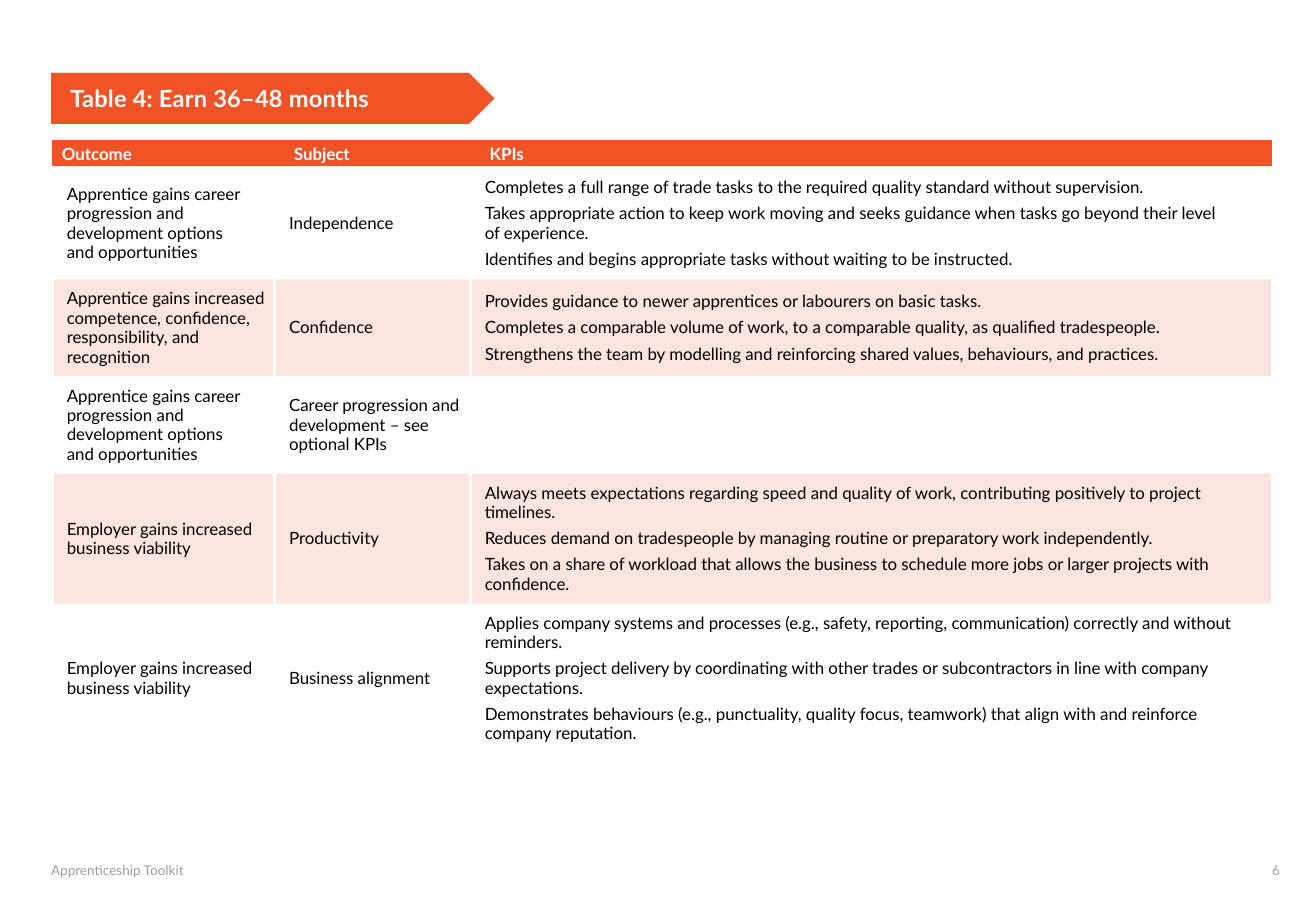
"""Builds the slide with the KPI table for months 36 to 48 of an apprenticeship."""
from lxml import etree
from pptx import Presentation
from pptx import util as u
from pptx.dml.color import RGBColor
from pptx.enum import shapes, text
from pptx.oxml import ns

ORANGE, WHITE, BLACK, GREY = "F05326", "FFFFFF", "000000", "9B9DA1"
WIDTHS = [1.83, 1.61, 6.6]
HEIGHTS = [0.23, 0.92, 0.8, 0.8, 1.06, 1.22]
CAREER = "Apprentice gains career progression and development options \nand opportunities"
VIABLE = "Employer gains increased business viability"
ROWS = [
    (["Outcome"], ["Subject"], ["KPIs"]),
    ([CAREER], ["Independence"], [
        "Completes a full range of trade tasks to the required quality standard without supervision.",
        "Takes appropriate action to keep work moving and seeks guidance when tasks go beyond their level \nof experience.",
        "Identifies and begins appropriate tasks without waiting to be instructed."]),
    (["Apprentice gains increased competence, confidence, responsibility, and recognition"], ["Confidence"], [
        "Provides guidance to newer apprentices or labourers on basic tasks.",
        "Completes a comparable volume of work, to a comparable quality, as qualified tradespeople.",
        "Strengthens the team by modelling and reinforcing shared values, behaviours, and practices."]),
    ([CAREER], ["Career progression and development – see optional KPIs"], []),
    ([VIABLE], ["Productivity"], [
        "Always meets expectations regarding speed and quality of work, contributing positively to project timelines.",
        "Reduces demand on tradespeople by managing routine or preparatory work independently.",
        "Takes on a share of workload that allows the business to schedule more jobs or larger projects with confidence."]),
    ([VIABLE], ["Business alignment"], [
        "Applies company systems and processes (e.g., safety, reporting, communication) correctly and without reminders.",
        "Supports project delivery by coordinating with other trades or subcontractors in line with company expectations.",
        "Demonstrates behaviours (e.g., punctuality, quality focus, teamwork) that align with and reinforce company reputation."]),
]


def paint(part, color):
    """Give a fill or a font one solid colour."""
    if hasattr(part, "solid"):
        part.solid()
        part.fore_color.rgb = RGBColor.from_string(color)
    else:
        part.color.rgb = RGBColor.from_string(color)


def write(para, words, size, color, bold=False):
    """Put one run of styled text into a paragraph."""
    para.text = words
    for run in para.runs:
        for key, val in {"name": "Lato", "size": u.Pt(size), "bold": bold}.items():
            setattr(run.font, key, val)
        paint(run.font, color)


deck = Presentation()
deck.slide_width, deck.slide_height = u.Inches(10.83), u.Inches(7.5)
slide = deck.slides.add_slide(deck.slide_layouts[6])

banner = slide.shapes.add_shape(
    shapes.MSO_SHAPE.PENTAGON, u.Inches(0.42), u.Inches(0.6), u.Inches(3.65), u.Inches(0.42))
banner.shadow.inherit = False
paint(banner.fill, ORANGE)
banner.line.fill.background()

for words, left, top, width, height, size, color, bold in [
    ("Apprenticeship Toolkit", 0.42, 7.1, 2.19, 0.18, 8, GREY, False),
    ("6", 10.47, 7.1, 0.36, 0.18, 8, GREY, False),
    ("Table 4: Earn 36–48 months", 0.58, 0.69, 3.4, 0.24, 14, WHITE, True),
]:
    box = slide.shapes.add_textbox(u.Inches(left), u.Inches(top), u.Inches(width), u.Inches(height))
    frame = box.text_frame
    frame.word_wrap = True
    for side in ("left", "top", "right", "bottom"):
        setattr(frame, "margin_" + side, 0)
    write(frame.paragraphs[0], words, size, color, bold)
    if bold:
        frame.paragraphs[0].runs[0].font._element.set("spc", "10")

holder = slide.shapes.add_table(
    len(ROWS), len(WIDTHS), u.Inches(0.43), u.Inches(1.15), u.Inches(sum(WIDTHS)), u.Inches(sum(HEIGHTS)))
table = holder.table
table.first_row = table.horz_banding = False
table._tbl.tblPr.find(ns.qn("a:tableStyleId")).text = "{2D5ABB26-0587-4C30-8999-92F81FD0307C}"
for col, width in zip(table.columns, WIDTHS):
    col.width = u.Inches(width)
for row, height in zip(table.rows, HEIGHTS):
    row.height = u.Inches(height)

for r, row in enumerate(ROWS):
    head, tint = r == 0, r in (2, 4)
    for c, lines in enumerate(row):
        cell = table.cell(r, c)
        cell.vertical_anchor = text.MSO_ANCHOR.MIDDLE
        pads = (0.08 if c else 0, 0.01, 0.01, 0.01) if head else (0.04, 0.08, 0.04, 0.08)
        for side, pad in zip(("left", "top", "right", "bottom"), pads):
            setattr(cell, "margin_" + side, u.Inches(pad))

        paint(cell.fill, ORANGE if head or tint else WHITE)
        props = cell._tc.tcPr
        if tint:
            shade = props.find(".//" + ns.qn("a:srgbClr"))
            etree.SubElement(shade, ns.qn("a:alpha"), val="15000")
        for spot, edge in enumerate(["lnB"] if head else ["lnL", "lnR"]):
            line = etree.Element(ns.qn("a:" + edge), w=str(u.Pt(2.25)))
            solid = etree.SubElement(line, ns.qn("a:solidFill"))
            etree.SubElement(solid, ns.qn("a:srgbClr"), val=WHITE)
            props.insert(spot, line)

        frame = cell.text_frame
        for n, words in enumerate(lines):
            para = frame.add_paragraph() if n else frame.paragraphs[0]
            write(para, words, 10, WHITE if head else BLACK, head)
            listed = c == 2 and not head
            para.space_before = u.Pt(0 if listed else 6)
            para.space_after = u.Pt(4 if listed else 6)
            if not head:
                para.line_spacing = u.Pt(11.5)
            para._p.get_or_add_pPr().set("marL", str(u.Inches(0.08)))

deck.save("out.pptx")
